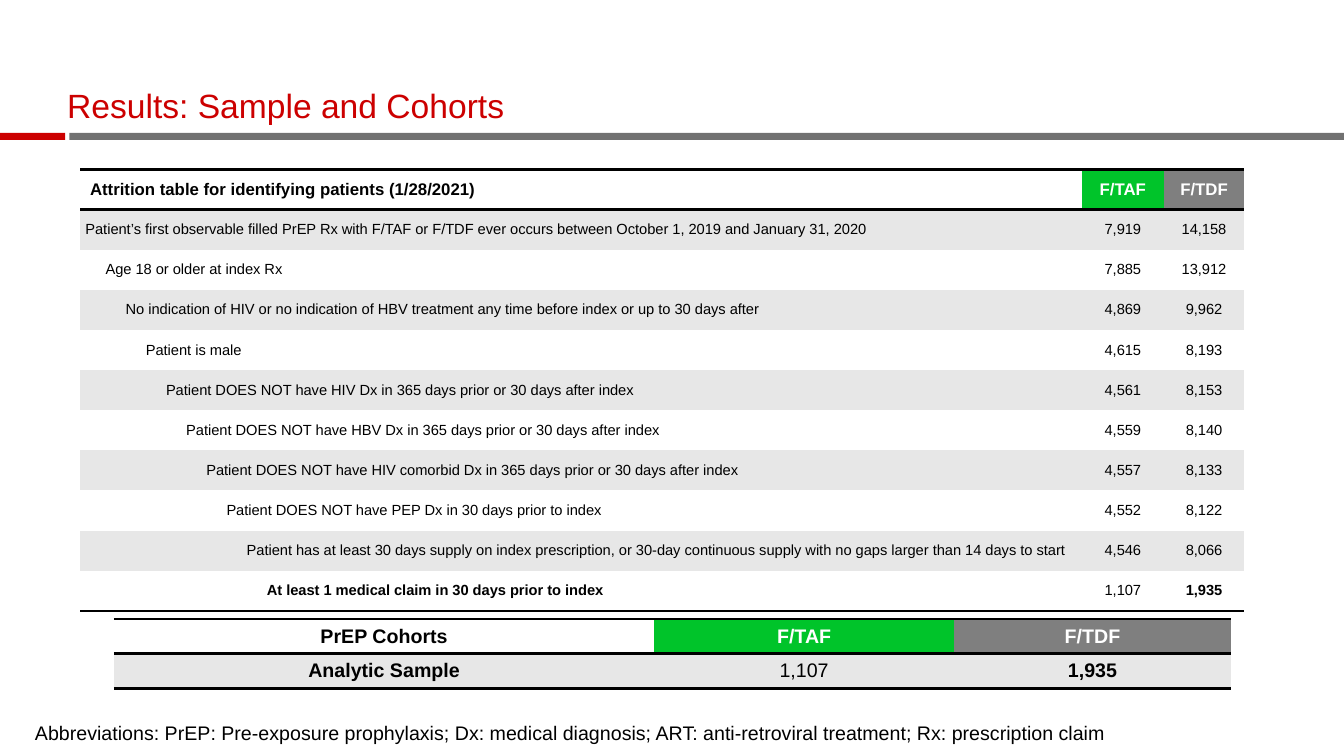
from lxml import etree
from pptx import Presentation
from pptx.dml.color import RGBColor
from pptx.enum.shapes import MSO_SHAPE
from pptx.enum.text import MSO_ANCHOR, PP_ALIGN
from pptx.oxml import parse_xml
from pptx.oxml.ns import nsdecls, qn
from pptx.util import Pt

RED = RGBColor(0xCC, 0x00, 0x00)
RULE_GRAY = RGBColor(0x71, 0x71, 0x71)
GREEN = RGBColor(0x00, 0xC4, 0x2A)
GRAY = RGBColor(0x7F, 0x7F, 0x7F)
BAND = RGBColor(0xE7, 0xE7, 0xE7)
BLACK = RGBColor(0x00, 0x00, 0x00)
WHITE = RGBColor(0xFF, 0xFF, 0xFF)
HEADER_FILLS = [WHITE, GREEN, GRAY]
PLAIN_STYLE = "{2D5ABB26-0587-4C30-8999-92F81FD0307C}"

ATTRITION = [
    ("Attrition table for identifying patients (1/28/2021)", "F/TAF", "F/TDF"),
    ("Patient’s first observable filled PrEP Rx with F/TAF or F/TDF ever occurs between October 1, 2019 and January 31, 2020", "7,919", "14,158"),
    ("Age 18 or older at index Rx", "7,885", "13,912"),
    ("No indication of HIV or no indication of HBV treatment any time before index or up to 30 days after", "4,869", "9,962"),
    ("Patient is male", "4,615", "8,193"),
    ("Patient DOES NOT have HIV Dx in 365 days prior or 30 days after index", "4,561", "8,153"),
    ("Patient DOES NOT have HBV Dx in 365 days prior or 30 days after index", "4,559", "8,140"),
    ("Patient DOES NOT have HIV comorbid Dx in 365 days prior or 30 days after index", "4,557", "8,133"),
    ("Patient DOES NOT have PEP Dx in 30 days prior to index", "4,552", "8,122"),
    ("Patient has at least 30 days supply on index prescription, or 30-day continuous supply with no gaps larger than 14 days to start", "4,546", "8,066"),
    ("At least 1 medical claim in 30 days prior to index", "1,107", "1,935"),
]
COHORTS = [
    ("PrEP Cohorts", "F/TAF", "F/TDF"),
    ("Analytic Sample", "1,107", "1,935"),
]


def style_paragraph(paragraph, size, color, bold=False):
    paragraph.font.name = "Arial"
    paragraph.font.size = Pt(size)
    paragraph.font.bold = bold
    paragraph.font.color.rgb = color


def add_patient_table(rows, left, top, widths, row_height, header_size, body_size, margins):
    table = slide.shapes.add_table(
        len(rows), len(widths), Pt(left), Pt(top),
        Pt(sum(widths)), Pt(row_height * len(rows))).table
    table.first_row = table.horz_banding = False
    table._tbl.tblPr.find(qn("a:tableStyleId")).text = PLAIN_STYLE
    for column, width in zip(table.columns, widths):
        column.width = Pt(width)
    last = len(rows) - 1
    for r, row in enumerate(rows):
        table.rows[r].height = Pt(row_height)
        for c, value in enumerate(row):
            cell = table.cell(r, c)
            cell.text = value
            cell.vertical_anchor = MSO_ANCHOR.MIDDLE
            cell.margin_left = cell.margin_right = Pt(margins[0])
            cell.margin_top = cell.margin_bottom = Pt(margins[1])
            edges = ["lnT", "lnB"] if r == 0 else ["lnB"] if r == last else []
            for edge in edges:
                border = parse_xml(f'<a:{edge} {nsdecls("a")} w="{Pt(2)}"/>')
                solid = etree.SubElement(border, qn("a:solidFill"))
                etree.SubElement(solid, qn("a:srgbClr"), val=str(BLACK))
                cell._tc.get_or_add_tcPr().append(border)
            cell.fill.solid()
            cell.fill.fore_color.rgb = HEADER_FILLS[c] if r == 0 else BAND if r % 2 else WHITE
            paragraph = cell.text_frame.paragraphs[0]
            paragraph.alignment = PP_ALIGN.CENTER
            style_paragraph(
                paragraph, header_size if r == 0 else body_size,
                WHITE if r == 0 and c > 0 else BLACK,
                r == 0 or (r == last and c != 1))
    return table


prs = Presentation()
prs.slide_width, prs.slide_height = Pt(960), Pt(540)
slide = prs.slides.add_slide(prs.slide_layouts[5])

for left, width, color in [(49.5, 910.5, RULE_GRAY), (0, 46.5, RED)]:
    rule = slide.shapes.add_shape(MSO_SHAPE.RECTANGLE, Pt(left), Pt(95), Pt(width), Pt(5))
    rule.shadow.inherit = False
    rule.fill.solid()
    rule.fill.fore_color.rgb = color
    rule.line.fill.background()

title = slide.shapes.title
title.left, title.top, title.width, title.height = Pt(48), Pt(36.7), Pt(864), Pt(53.3)
abbreviations = slide.shapes.add_textbox(Pt(25), Pt(517), Pt(875), Pt(15))
for holder, text, size, color, anchor in [
    (title, "Results: Sample and Cohorts", 24, RED, MSO_ANCHOR.BOTTOM),
    (abbreviations, "Abbreviations: PrEP: Pre-exposure prophylaxis; Dx: medical diagnosis; "
     "ART: anti-retroviral treatment; Rx: prescription claim", 14, BLACK, MSO_ANCHOR.TOP),
]:
    frame = holder.text_frame
    frame.text = text
    frame.word_wrap = True
    frame.vertical_anchor = anchor
    frame.margin_left = frame.margin_right = frame.margin_top = frame.margin_bottom = 0
    paragraph = frame.paragraphs[0]
    paragraph.alignment = PP_ALIGN.LEFT
    paragraph.line_spacing = 0.9
    style_paragraph(paragraph, size, color)

attrition = add_patient_table(ATTRITION, 57.4, 121, [715.2, 59, 57], 28.67, 12, 10.5, (3.6, 1.4))
for step in range(len(ATTRITION)):
    criterion = attrition.cell(step, 0).text_frame.paragraphs[0]
    criterion.alignment = PP_ALIGN.LEFT
    indent = 14.4 * (step - 1) if step else 3.3
    criterion._p.get_or_add_pPr().set("marL", str(Pt(indent)))

add_patient_table(COHORTS, 81.4, 442, [386, 214, 198], 24, 14, 14, (4, 4))

prs.save("out.pptx")
